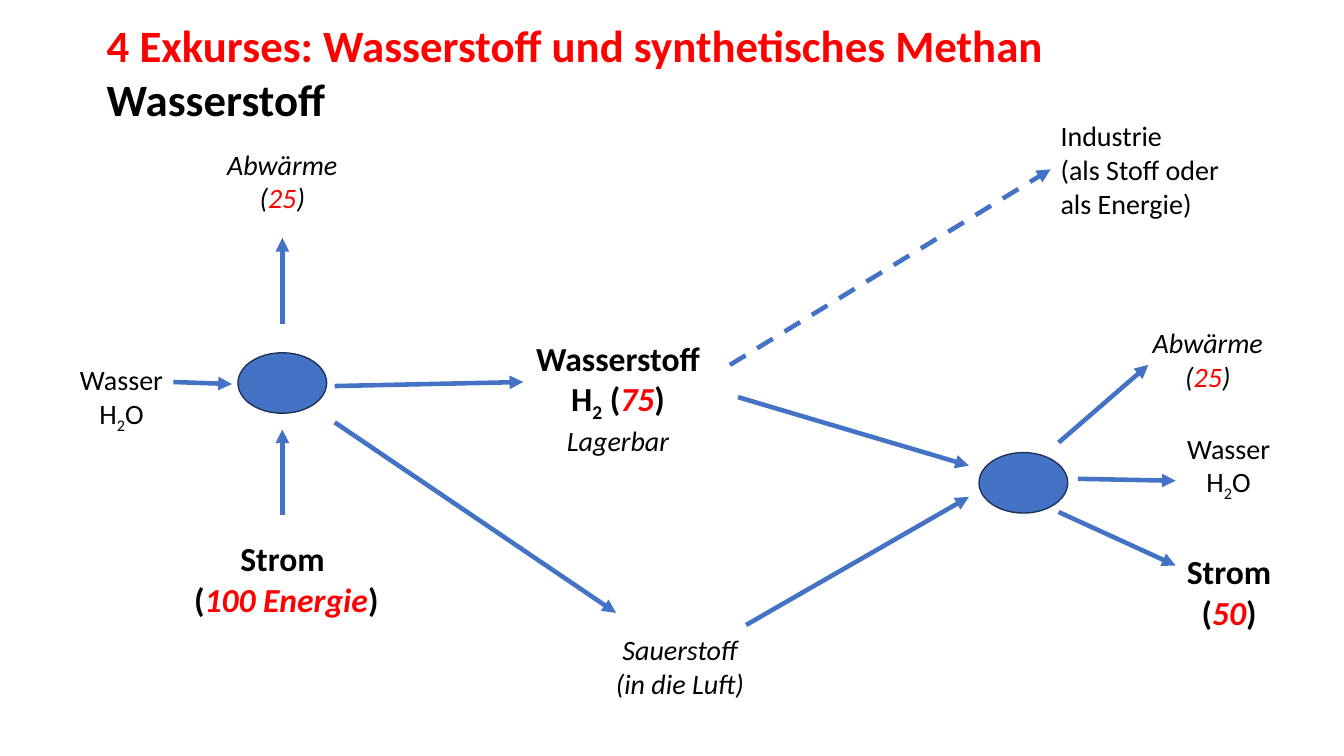
from lxml import etree
from pptx import Presentation
from pptx import util as u
from pptx.dml.color import RGBColor
from pptx.enum import dml, shapes, text
from pptx.oxml.ns import qn

COLORS = {"black": "000000", "red": "FF0000", "blue": "4472C4", "outline": "1E3256"}
FONT = "Calibri"

# Text blocks: paragraphs of (text, flags) runs; b bold, i italic, r red, s subscript
TITLE = [[("4 Exkurses: Wasserstoff und synthetisches Methan", "br")],
         [("Wasserstoff", "b")]]
WATER = [[("Wasser", "")], [("H", ""), ("2", "s"), ("O", "")]]
WASTE_HEAT = [[("Abwärme (", "i"), ("25", "ir"), (")", "i")]]
POWER_IN = [[("Strom ", "b")], [("(", "b"), ("100 Energie", "bir"), (")", "b")]]
POWER_OUT = [[("Strom (", "b"), ("50", "bir"), (")", "b")]]
HYDROGEN = [[("Wasserstoff", "b")],
            [("H", "b"), ("2", "bs"), (" (", "b"), ("75", "bir"), (")", "b")],
            [("Lagerbar", "i")]]
OXYGEN = [[("Sauerstoff ", "i")], [("(in die Luft) ", "i")]]
INDUSTRY = [[("Industrie", "")], [("(als Stoff oder als Energie)", "")]]

# (left, top, width, height), paragraphs, point size of each paragraph, centred
LABELS = [
    ((0.96, 0.13, 11.42, 1.18), TITLE, (32, 32), False),
    ((0.41, 3.55, 1.59, 0.77), WATER, (20, 20), True),
    ((11.39, 4.23, 1.59, 0.77), WATER, (20, 20), True),
    ((2.13, 1.41, 1.34, 0.77), WASTE_HEAT, (20,), True),
    ((11.31, 3.18, 1.34, 0.77), WASTE_HEAT, (20,), True),
    ((1.67, 5.29, 2.34, 0.91), POWER_IN, (24, 24), True),
    ((11.52, 5.42, 1.34, 0.91), POWER_OUT, (24,), True),
    ((5.21, 3.3, 1.84, 1.25), HYDROGEN, (24, 24, 20), True),
    ((5.7, 6.23, 2.15, 0.77), OXYGEN, (20, 20), True),
    ((10.42, 1.13, 1.95, 1.11), INDUSTRY, (20, 20), False),
]

# Converters: left, top
CONVERTERS = [(2.36, 3.5), (9.71, 4.49)]
CONVERTER_SIZE = (0.88, 0.6)

# Flows: start x, y, end x, y
FLOWS = [
    (1.72, 3.79, 2.3, 3.81),     # water to electrolysis
    (2.8, 5.11, 2.8, 4.26),      # power to electrolysis
    (2.8, 3.21, 2.8, 2.36),      # electrolysis to waste heat
    (3.32, 4.19, 6.11, 6.08),    # electrolysis to oxygen
    (3.32, 3.83, 5.19, 3.79),    # electrolysis to hydrogen
    (7.32, 3.94, 9.61, 4.62),    # hydrogen to fuel cell
    (7.4, 6.2, 9.61, 4.93),      # oxygen to fuel cell
    (10.5, 5.08, 11.66, 5.61),   # fuel cell to power
    (10.69, 4.75, 11.66, 4.77),  # fuel cell to water
    (10.5, 4.39, 11.39, 3.62),   # fuel cell to waste heat
]
INDUSTRY_FLOW = (7.24, 3.62, 10.42, 1.68)


def color(name):
    return RGBColor.from_string(COLORS[name])


def inches(values):
    return [u.Inches(value) for value in values]


def add_label(slide, box, paragraphs, sizes, centred):
    frame = slide.shapes.add_textbox(*inches(box)).text_frame
    frame.word_wrap = True
    for index, (runs, size) in enumerate(zip(paragraphs, sizes)):
        paragraph = frame.paragraphs[0] if index == 0 else frame.add_paragraph()
        paragraph.alignment = text.PP_ALIGN.CENTER if centred else text.PP_ALIGN.LEFT
        for content, flags in runs:
            run = paragraph.add_run()
            run.text = content
            font = run.font
            font.name, font.size = FONT, u.Pt(size)
            font.bold, font.italic = "b" in flags, "i" in flags
            font.color.rgb = color("red" if "r" in flags else "black")
            if "s" in flags:
                run._r.get_or_add_rPr().set("baseline", "-25000")


def add_flow(slide, points, dashed=False):
    connector = slide.shapes.add_connector(shapes.MSO_CONNECTOR.STRAIGHT, *inches(points))
    connector.line.color.rgb = color("blue")
    connector.line.width = u.Pt(3.25)
    if dashed:
        connector.line.dash_style = dml.MSO_LINE.DASH
    etree.SubElement(connector.line._get_or_add_ln(), qn("a:tailEnd"), type="triangle")
    etree.SubElement(connector._element.spPr, qn("a:effectLst"))


def add_converter(slide, position):
    ellipse = slide.shapes.add_shape(shapes.MSO_SHAPE.OVAL, *inches(position + CONVERTER_SIZE))
    ellipse.shadow.inherit = False
    ellipse.fill.solid()
    ellipse.fill.fore_color.rgb = color("blue")
    ellipse.line.color.rgb = color("outline")
    ellipse.line.width = u.Pt(1)


def main():
    presentation = Presentation()
    presentation.slide_width, presentation.slide_height = inches((13.33, 7.5))
    slide = presentation.slides.add_slide(presentation.slide_layouts[6])
    for label in LABELS:
        add_label(slide, *label)
    for position in CONVERTERS:
        add_converter(slide, position)
    for points in FLOWS:
        add_flow(slide, points)
    add_flow(slide, INDUSTRY_FLOW, dashed=True)
    presentation.save("out.pptx")


if __name__ == "__main__":
    main()
